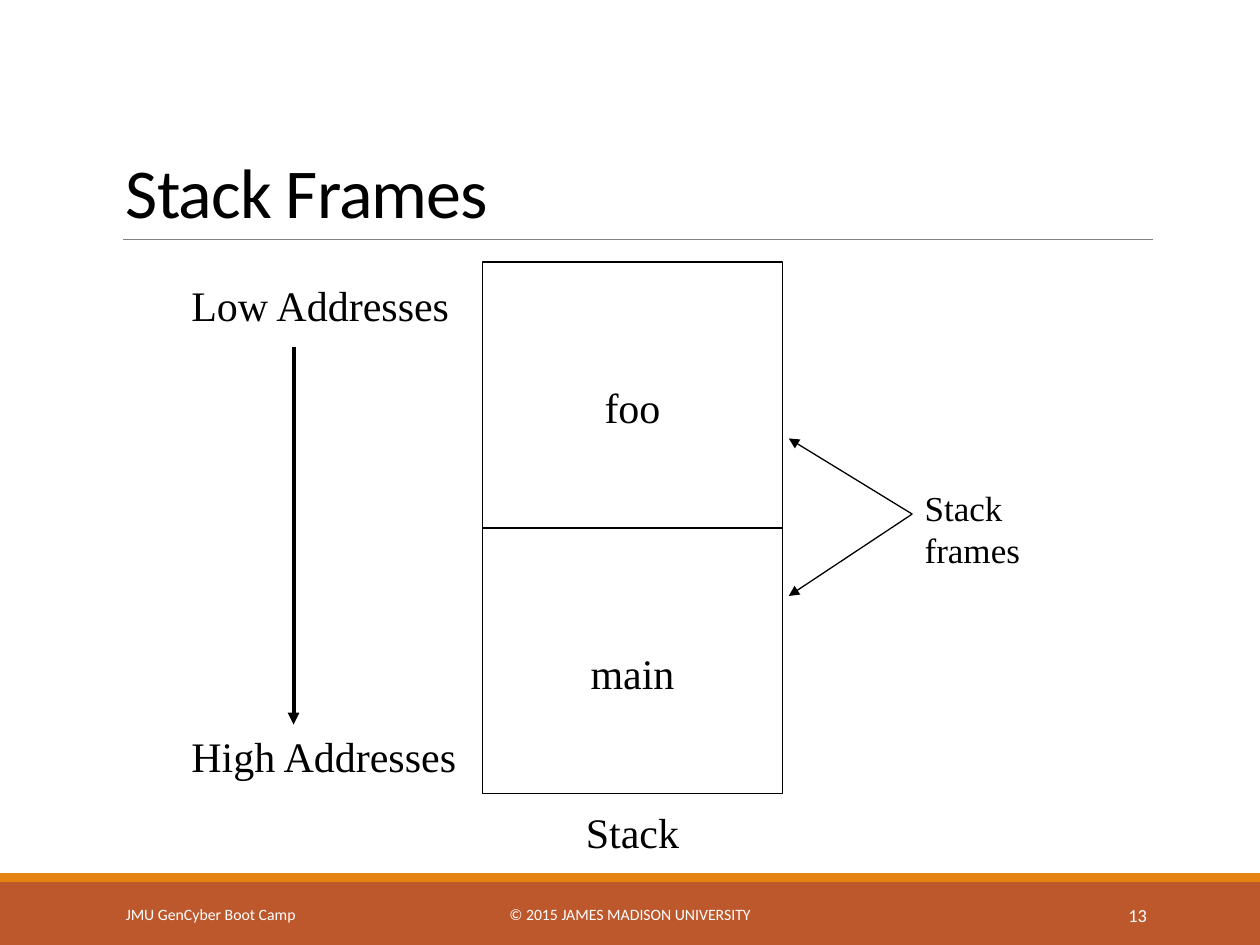
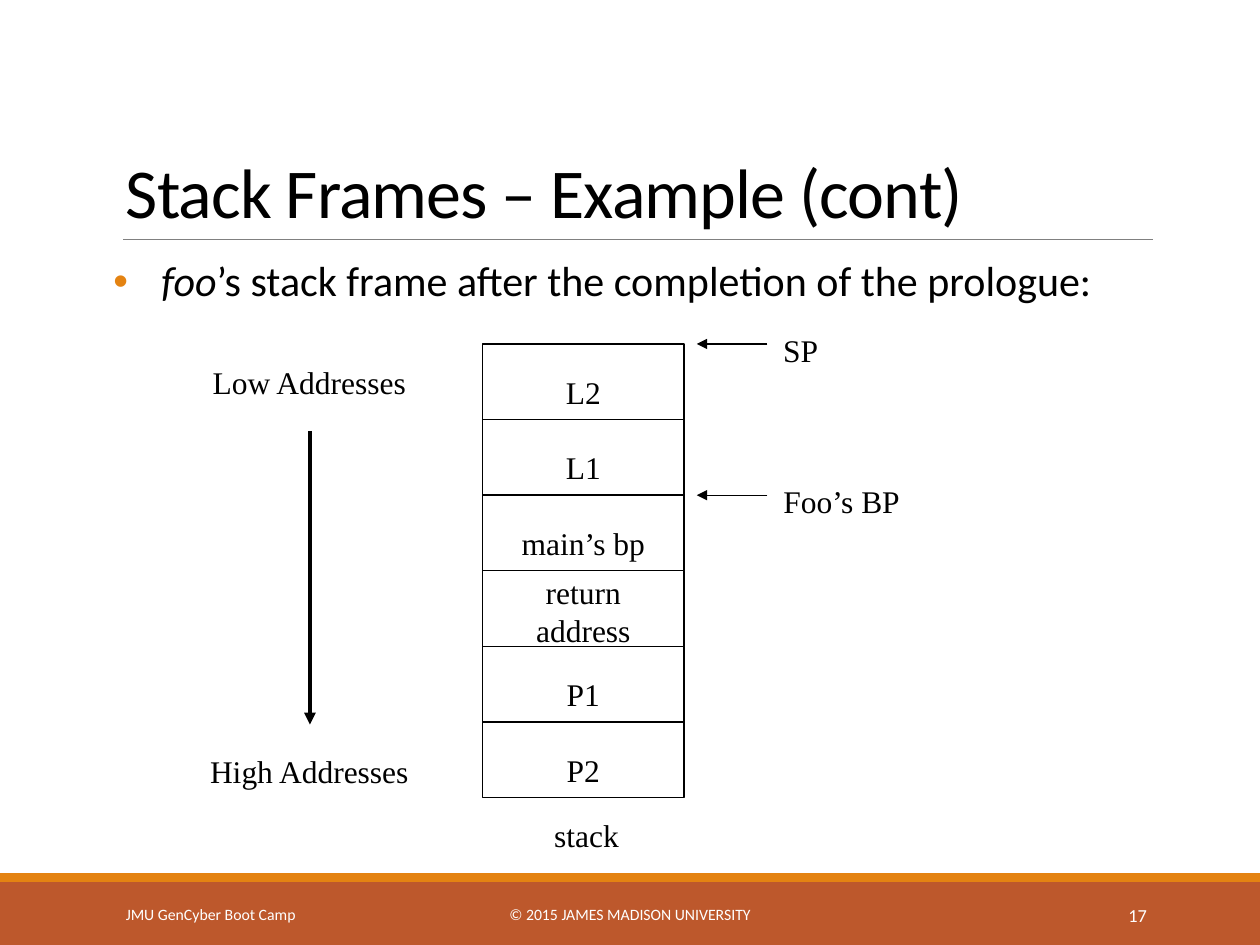
import dataclasses

import pptx
import pptx.dml.color
import pptx.enum.shapes
import pptx.enum.text
import pptx.oxml
import pptx.oxml.ns
import pptx.util
from pptx.util import Inches

ALIGN = pptx.enum.text.PP_ALIGN
ANCHOR = pptx.enum.text.MSO_ANCHOR
SHAPE = pptx.enum.shapes.MSO_SHAPE
LINK = pptx.enum.shapes.MSO_CONNECTOR


@dataclasses.dataclass(frozen=True)
class Theme:
    # Colours
    ink: str = "000000"
    paper: str = "FFFFFF"
    rust: str = "BD582C"
    gold: str = "E48312"
    rule: str = "808080"
    # Fonts
    sans: str = "Calibri"
    serif: str = "Times New Roman"
    # Type sizes
    title: float = 40
    large: float = 24
    note: float = 20
    small: float = 18
    page: float = 10.5
    foot: float = 9
    # Line widths
    hair: float = 0.5
    thin: float = 0.75
    thick: float = 2.25


def color(code):
    return pptx.dml.color.RGBColor.from_string(code)


def node(parent, tag, **attrs):
    item = pptx.oxml.ns.qn(tag)
    item = parent.makeelement(item, attrs)
    parent.append(item)
    return item


class Deck:
    def __init__(self, theme):
        self.theme = theme
        self.file = pptx.Presentation()
        self.file.slide_width = Inches(10)
        self.file.slide_height = Inches(7.5)
        self.slide = None

    def start(self, title, number):
        """Add a slide with the shared bands, title and footer."""
        t = self.theme
        self.slide = self.file.slides.add_slide(self.file.slide_layouts[6])
        self.rect(0, 7, 10, 0.5, fill=t.rust)
        self.rect(0, 6.93, 10, 0.07, fill=t.gold)
        self.line(0.98, 1.9, 9.15, 1.9, t.hair, t.rule, head=False)
        para = self.text(title, 0.9, 0.31, 8.25, 1.59, t.title, font=t.sans,
                         anchor=ANCHOR.BOTTOM)
        para.line_spacing = 0.85
        para.runs[0].font._element.set("spc", "-50")
        for words, x, w, size, align in (
                ("JMU GenCyber Boot Camp", 0.9, 2.03, t.foot, ALIGN.LEFT),
                ("© 2015 JAMES MADISON UNIVERSITY", 3.02, 3.96, t.foot,
                 ALIGN.CENTER),
                (str(number), 8.12, 1.08, t.page, ALIGN.RIGHT)):
            self.text(words, x, 7.06, w, 0.4, size, align, t.sans, t.paper,
                      ANCHOR.MIDDLE)

    def rect(self, x, y, w, h, fill=None):
        """Draw a filled band, or an outlined box when there is no fill."""
        box = self.slide.shapes.add_shape(
            SHAPE.RECTANGLE, Inches(x), Inches(y), Inches(w), Inches(h))
        box.shadow.inherit = False
        if fill:
            box.fill.solid()
            box.fill.fore_color.rgb = color(fill)
            box.line.fill.background()
        else:
            box.fill.background()
            box.line.color.rgb = color(self.theme.ink)
            box.line.width = pptx.util.Pt(self.theme.thin)

    def style(self, para, size, font, ink):
        para.font.size = pptx.util.Pt(size)
        para.font.name = font
        para.font.color.rgb = color(ink)

    def frame(self, x, y, w, h, anchor=ANCHOR.TOP):
        box = self.slide.shapes.add_textbox(
            Inches(x), Inches(y), Inches(w), Inches(h))
        frame = box.text_frame
        frame.word_wrap = True
        frame.vertical_anchor = anchor
        return frame

    def text(self, words, x, y, w, h, size, align=ALIGN.LEFT, font=None,
             ink=None, anchor=ANCHOR.TOP):
        para = self.frame(x, y, w, h, anchor).paragraphs[0]
        para.add_run().text = words
        para.alignment = align
        self.style(para, size, font or self.theme.serif,
                   ink or self.theme.ink)
        return para

    def bullet(self, runs, x, y, w, h):
        """Write one bulleted line from (words, italic) pairs."""
        frame = self.frame(x, y, w, h)
        frame.margin_left = frame.margin_right = 0
        para = frame.paragraphs[0]
        para.line_spacing = 0.9
        para.space_after = pptx.util.Pt(2)
        props = para._p.get_or_add_pPr()
        props.set("marL", str(Inches(0.38)))
        props.set("indent", str(-Inches(0.38)))
        tint = node(props, "a:buClr")
        node(tint, "a:srgbClr", val=self.theme.gold)
        node(props, "a:buFont", typeface="Arial")
        node(props, "a:buChar", char="•")
        self.style(para, self.theme.large, self.theme.sans, self.theme.ink)
        for words, slant in runs:
            run = para.add_run()
            run.text = words
            run.font.italic = slant

    def line(self, x1, y1, x2, y2, width, ink=None, head=True):
        """Draw a straight line, with an arrowhead at its end by default."""
        link = self.slide.shapes.add_connector(
            LINK.STRAIGHT, Inches(x1), Inches(y1), Inches(x2), Inches(y2))
        link.line.color.rgb = color(ink or self.theme.ink)
        link.line.width = pptx.util.Pt(width)
        if head:
            node(link.line._get_or_add_ln(), "a:tailEnd", type="triangle")
        node(link._element.spPr, "a:effectLst")

    def cell(self, words, x, y, w, h, size, pad, drop, high):
        """Draw a stack box with its label drop inches below the top."""
        self.rect(x, y, w, h)
        self.text(words, x + pad, y + drop, w - 2 * pad, high, size,
                  ALIGN.CENTER)


def frames(deck):
    t = deck.theme
    deck.start("Stack Frames", 13)
    # Stack
    left, top, wide, high = 3.83, 2.08, 2.38, 2.11
    for row, name in enumerate(("foo", "main")):
        deck.cell(name, left, top + row * high, wide, high, t.large,
                  0.57, 0.9, 0.5)
    deck.text("Stack", 3.94, 6.35, 2.16, 0.5, t.large, ALIGN.CENTER)
    # Frame pointers
    deck.text("Stack frames", 7.24, 3.81, 1.06, 0.77, t.note)
    for y in (3.48, 4.73):
        deck.line(7.24, 4.08, 6.26, y, t.thin)
    # Address scale
    for name, y in (("Low Addresses", 2.17), ("High Addresses", 5.75)):
        deck.text(name, 1.42, y, 2.41, 0.5, t.large)
    deck.line(2.33, 2.75, 2.33, 5.75, t.thick)


def example(deck):
    t = deck.theme
    deck.start("Stack Frames – Example (cont)", 17)
    deck.bullet((("foo", True),
                 ("’s stack frame after the completion of the prologue:",
                  False)), 0.9, 2.02, 8.25, 4.4)
    # Stack
    left, top, wide, high = 3.83, 2.73, 1.6, 0.6
    names = ("L2", "L1", "main’s bp", "return address", "P1", "P2")
    for row, name in enumerate(names):
        drop, tall = (-0.03, 0.7) if " a" in name else (0.18, 0.4)
        deck.cell(name, left, top + row * high, wide, high, t.small,
                  0.1, drop, tall)
    deck.text("stack", left, 6.43, 1.65, 0.4, t.small, ALIGN.CENTER)
    # Pointers
    for name, row, w in (("SP", 0, 0.65), ("Foo’s BP", 2, 1.3)):
        y = top + row * high
        deck.text(name, 6.03, y - 0.15, w, 0.4, t.small, ALIGN.CENTER)
        deck.line(6.09, y, 5.53, y, t.thin)
    # Address scale
    for name, y in (("Low Addresses", 2.83), ("High Addresses", 5.92)):
        deck.text(name, 1.25, y, 2.41, 0.4, t.small, ALIGN.CENTER)
    deck.line(2.46, 3.42, 2.46, 5.75, t.thick)


def main():
    deck = Deck(Theme())
    frames(deck)
    example(deck)
    deck.file.save("out.pptx")


if __name__ == "__main__":
    main()
